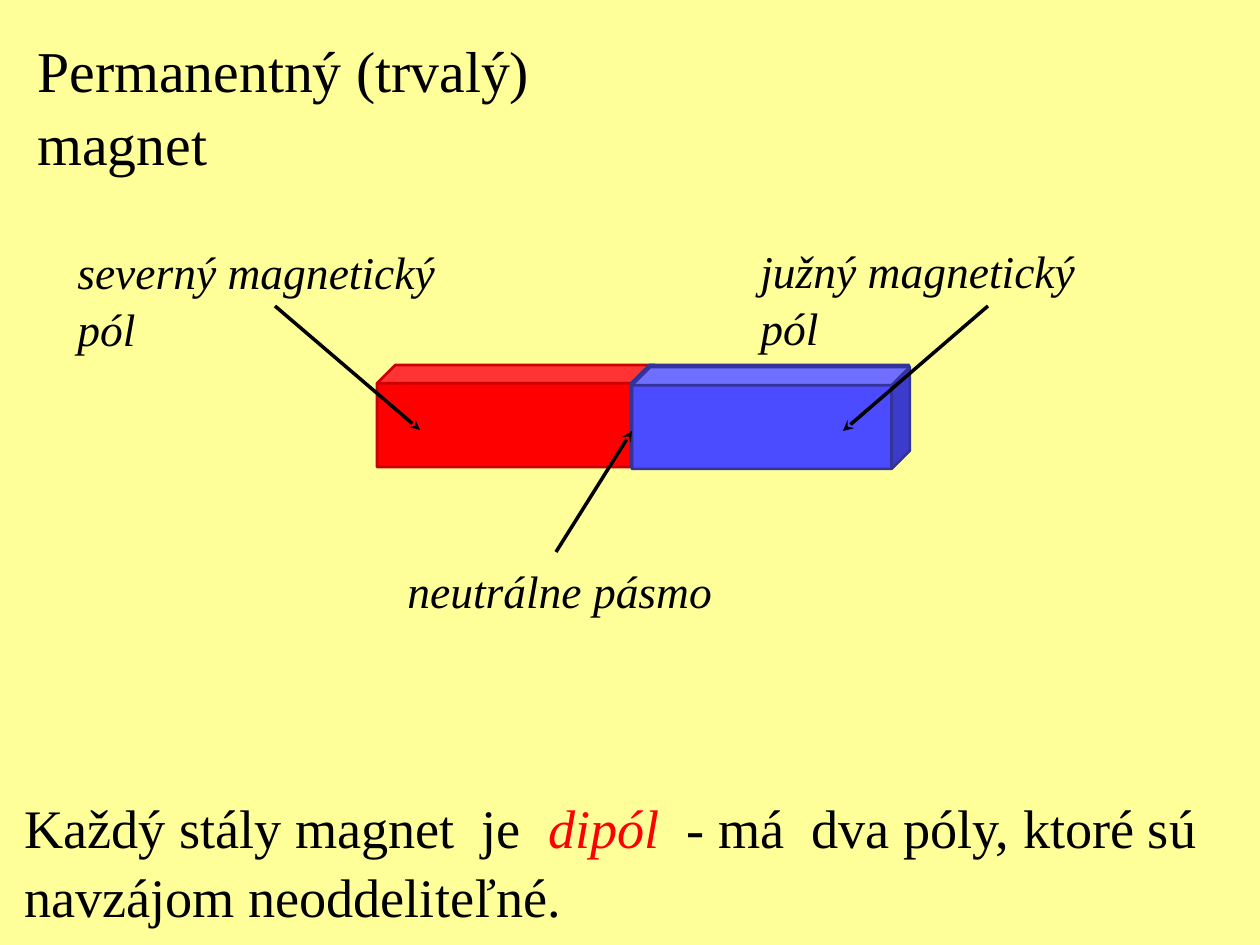
from dataclasses import dataclass

from lxml import etree
from pptx import Presentation
from pptx.dml.color import RGBColor
from pptx.enum.shapes import MSO_CONNECTOR, MSO_SHAPE
from pptx.oxml.ns import qn
from pptx.util import Pt

EMU_PER_PX = 914400 // 126
CUBE = MSO_SHAPE.CUBE
STRAIGHT = MSO_CONNECTOR.STRAIGHT


@dataclass(frozen=True)
class Theme:
    background: str = "FFFF99"
    ink: str = "000000"
    north: str = "FF0000"
    north_edge: str = "C80000"
    south: str = "4B4BFF"
    south_edge: str = "333399"
    font: str = "Times New Roman"
    title_size: int = 33
    label_size: int = 26
    body_size: int = 31
    line_spacing: float = 1.05
    edge_width: float = 1.5
    arrow_width: float = 2


def px(length):
    return length * EMU_PER_PX


def add_run(paragraph, text, *, font, size, color, italic=False):
    run = paragraph.add_run()
    run.text = text
    run.font.name = font
    run.font.size = Pt(size)
    run.font.italic = italic
    run.font.color.rgb = RGBColor.from_string(color)


class SlideBuilder:
    def __init__(self, slide, theme):
        self.slide = slide
        self.theme = theme
        fill = slide.background.fill
        fill.solid()
        fill.fore_color.rgb = RGBColor.from_string(theme.background)

    def text(self, left, top, width, height, lines, size, italic=False):
        """Each line is a list of (text, format overrides) pairs."""
        frame = self.slide.shapes.add_textbox(
            px(left), px(top), px(width), px(height)).text_frame
        frame.word_wrap = True
        for index, parts in enumerate(lines):
            paragraph = frame.add_paragraph() if index else frame.paragraphs[0]
            paragraph.line_spacing = self.theme.line_spacing
            for text, overrides in parts:
                style = dict(font=self.theme.font, size=size,
                             color=self.theme.ink, italic=italic)
                add_run(paragraph, text, **(style | overrides))

    def label(self, left, top, width, text):
        self.text(left, top, width, 67, [[(text, {})]],
                  self.theme.label_size, italic=True)

    def bar(self, left, top, color, edge):
        shape = self.slide.shapes.add_shape(
            CUBE, px(left), px(top), px(278), px(102))
        shape.adjustments[0] = 0.18
        shape.shadow.inherit = False
        shape.fill.solid()
        shape.fill.fore_color.rgb = RGBColor.from_string(color)
        shape.line.color.rgb = RGBColor.from_string(edge)
        shape.line.width = Pt(self.theme.edge_width)

    def arrow(self, start, end):
        connector = self.slide.shapes.add_connector(
            STRAIGHT, *map(px, start + end))
        connector.line.color.rgb = RGBColor.from_string(self.theme.ink)
        connector.line.width = Pt(self.theme.arrow_width)
        line = connector.line._get_or_add_ln()
        etree.SubElement(line, qn("a:tailEnd"), type="stealth")
        etree.SubElement(connector._element.spPr, qn("a:effectLst"))


def main():
    presentation = Presentation()
    presentation.slide_width = px(1260)
    presentation.slide_height = px(945)
    theme = Theme()
    slide = presentation.slides.add_slide(presentation.slide_layouts[6])
    builder = SlideBuilder(slide, theme)

    builder.text(25, 25, 690, 82, [[("Permanentný (trvalý) magnet", {})]],
                 theme.title_size)

    builder.bar(377, 365, theme.north, theme.north_edge)
    for left, top in ((631, 365), (632, 367)):
        builder.bar(left, top, theme.south, theme.south_edge)

    builder.label(65, 235, 442, "severný magnetický pól")
    builder.label(748, 234, 400, "južný magnetický pól")
    builder.label(395, 554, 340, "neutrálne pásmo")

    for start, end in (
        ((556, 552), (632, 431)),
        ((275, 306), (420, 430)),
        ((988, 306), (843, 431)),
    ):
        builder.arrow(start, end)

    builder.text(12, 785, 1216, 144, [
        [("Každý stály magnet  je  ", {}),
         ("dipól ", {"color": theme.north, "italic": True}),
         (" - má  dva póly, ktoré sú", {})],
        [("navzájom neoddeliteľné.", {})],
    ], theme.body_size)

    presentation.save("out.pptx")


if __name__ == "__main__":
    main()
